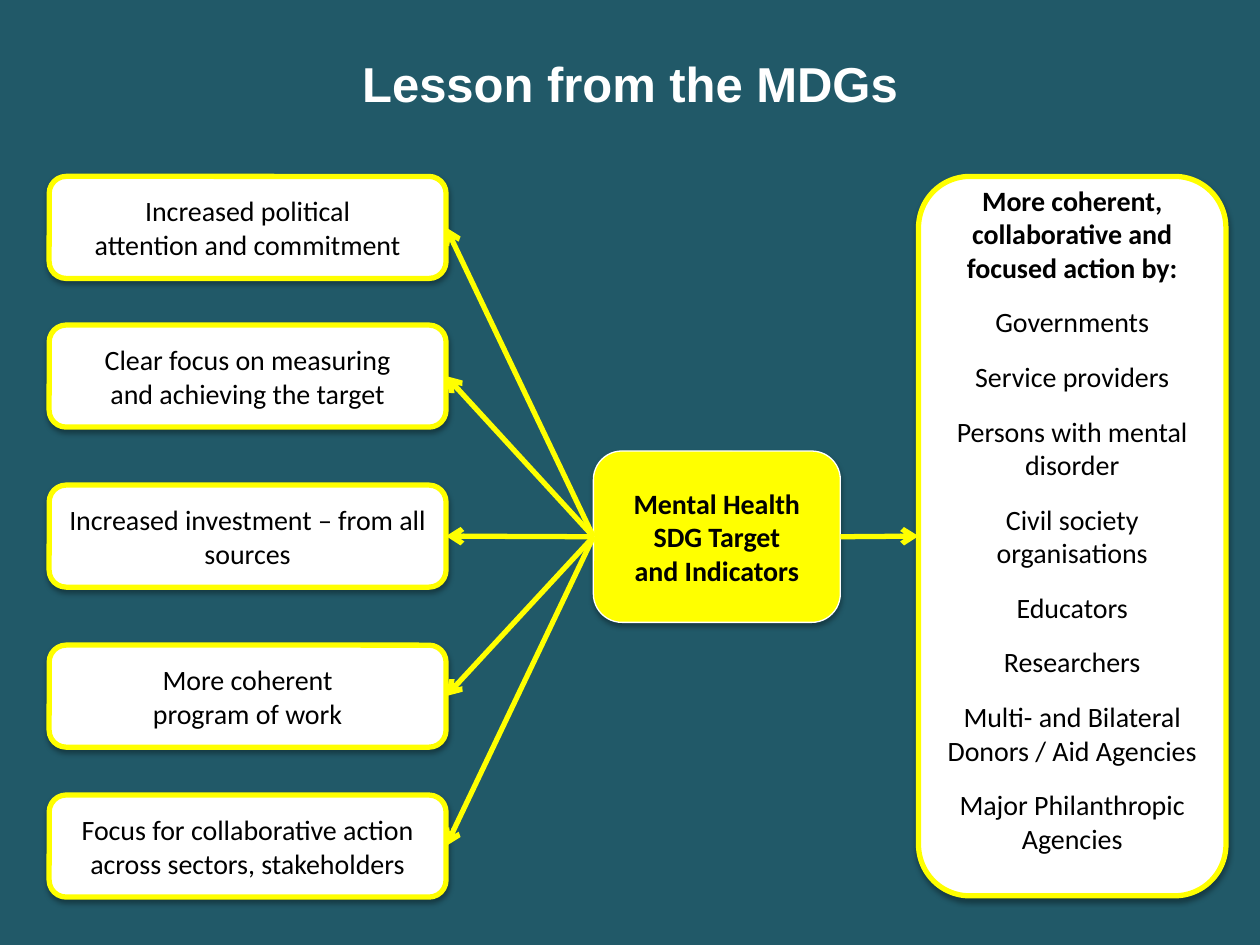
from lxml import etree
from pptx import Presentation
from pptx.dml.color import RGBColor
from pptx.enum.shapes import MSO_CONNECTOR, MSO_SHAPE
from pptx.enum.text import MSO_ANCHOR, PP_ALIGN
from pptx.oxml import parse_xml
from pptx.oxml.ns import nsdecls, qn
from pptx.util import Inches, Pt

ROUND = MSO_SHAPE.ROUNDED_RECTANGLE
STRAIGHT = MSO_CONNECTOR.STRAIGHT
CENTER = PP_ALIGN.CENTER
MIDDLE = MSO_ANCHOR.MIDDLE
LEFT, RIGHT = 1, 3

TITLE = "Lesson from the MDGs"
HUB = ["Mental Health", "SDG Target", "and Indicators"]
GAINS = [
    (1.4, ["Increased political", "attention and commitment"]),
    (2.58, ["Clear focus on measuring", "and achieving the target"]),
    (3.85, ["Increased investment – from all sources"]),
    (5.12, ["More coherent\vprogram of work"]),
    (6.31, ["Focus for collaborative action\vacross sectors, stakeholders"]),
]
ACTORS_HEAD = "More coherent, collaborative and focused action by:"
ACTORS = [
    "Governments",
    "Service providers",
    "Persons with mental disorder",
    "Civil society organisations",
    "Educators",
    "Researchers",
    "Multi- and Bilateral Donors / Aid Agencies",
    "Major Philanthropic Agencies",
]

THEME = {
    "back": RGBColor(0x21, 0x59, 0x68),
    "accent": RGBColor(0xFF, 0xFF, 0x00),
    "light": RGBColor(0xFF, 0xFF, 0xFF),
    "dark": RGBColor(0, 0, 0),
    "title": 28,
    "body": 16,
    "thick": 3,
    "thin": 0.75,
}


def write(frame, lines, size="body", color="dark", font="Calibri",
          bold=False, head=False, before=0):
    """Fill a frame with one paragraph per line; head makes the first bold."""
    frame.word_wrap = True
    frame.vertical_anchor = MIDDLE
    for i, line in enumerate(lines):
        para = frame.add_paragraph() if i else frame.paragraphs[0]
        para.text = line
        para.alignment = CENTER
        para.space_before = Pt(before if i else 0)
        for run in para.runs:
            run.font.name = font
            run.font.size = Pt(THEME[size])
            run.font.bold = bold or (head and i == 0)
            run.font.color.rgb = THEME[color]


def add_box(slide, place, lines, fill="light", edge="accent", width="thick",
            **style):
    box = slide.shapes.add_shape(ROUND, *map(Inches, place))
    box.fill.solid()
    box.fill.fore_color.rgb = THEME[fill]
    box.line.color.rgb = THEME[edge]
    box.line.width = Pt(THEME[width])
    box.shadow.inherit = False
    shade = box.element.spPr.find(qn("a:effectLst"))
    shade.append(parse_xml(
        f'<a:outerShdw {nsdecls("a")} blurRad="{Pt(3.1)}" dist="{Pt(1.8)}" '
        'dir="5400000" rotWithShape="0"><a:srgbClr val="000000">'
        '<a:alpha val="35000"/></a:srgbClr></a:outerShdw>'))
    write(box.text_frame, lines, **style)
    return box


def add_arrow(slide, start, side, end, end_side):
    arrow = slide.shapes.add_connector(STRAIGHT, 0, 0, 0, 0)
    arrow.begin_connect(start, side)
    arrow.end_connect(end, end_side)
    arrow.line.color.rgb = THEME["accent"]
    arrow.line.width = Pt(THEME["thick"])
    etree.SubElement(arrow.line._get_or_add_ln(), qn("a:tailEnd"), type="arrow")
    etree.SubElement(arrow.element.spPr, qn("a:effectLst"))


def main():
    deck = Presentation()
    deck.slide_width, deck.slide_height = Inches(10), Inches(7.5)
    slide = deck.slides.add_slide(deck.slide_layouts[5])
    slide.background.fill.solid()
    slide.background.fill.fore_color.rgb = THEME["back"]

    title = slide.shapes.title
    title.left, title.top = Inches(0.5), Inches(0.3)
    title.width, title.height = Inches(9), Inches(0.72)
    write(title.text_frame, [TITLE], size="title", color="light",
          font="Arial", bold=True)

    hub = add_box(slide, (4.71, 3.58, 1.96, 1.36), HUB, fill="accent",
                  edge="light", width="thin", bold=True)
    gains = [add_box(slide, (0.39, top, 3.15, 0.81), lines)
             for top, lines in GAINS]
    actors = add_box(slide, (7.29, 1.4, 2.44, 5.71), [ACTORS_HEAD] + ACTORS,
                     head=True, before=12)
    actors.text_frame.margin_bottom = Inches(0.32)

    for gain in gains:
        add_arrow(slide, hub, LEFT, gain, RIGHT)
    add_arrow(slide, hub, RIGHT, actors, LEFT)
    deck.save("out.pptx")


if __name__ == "__main__":
    main()
